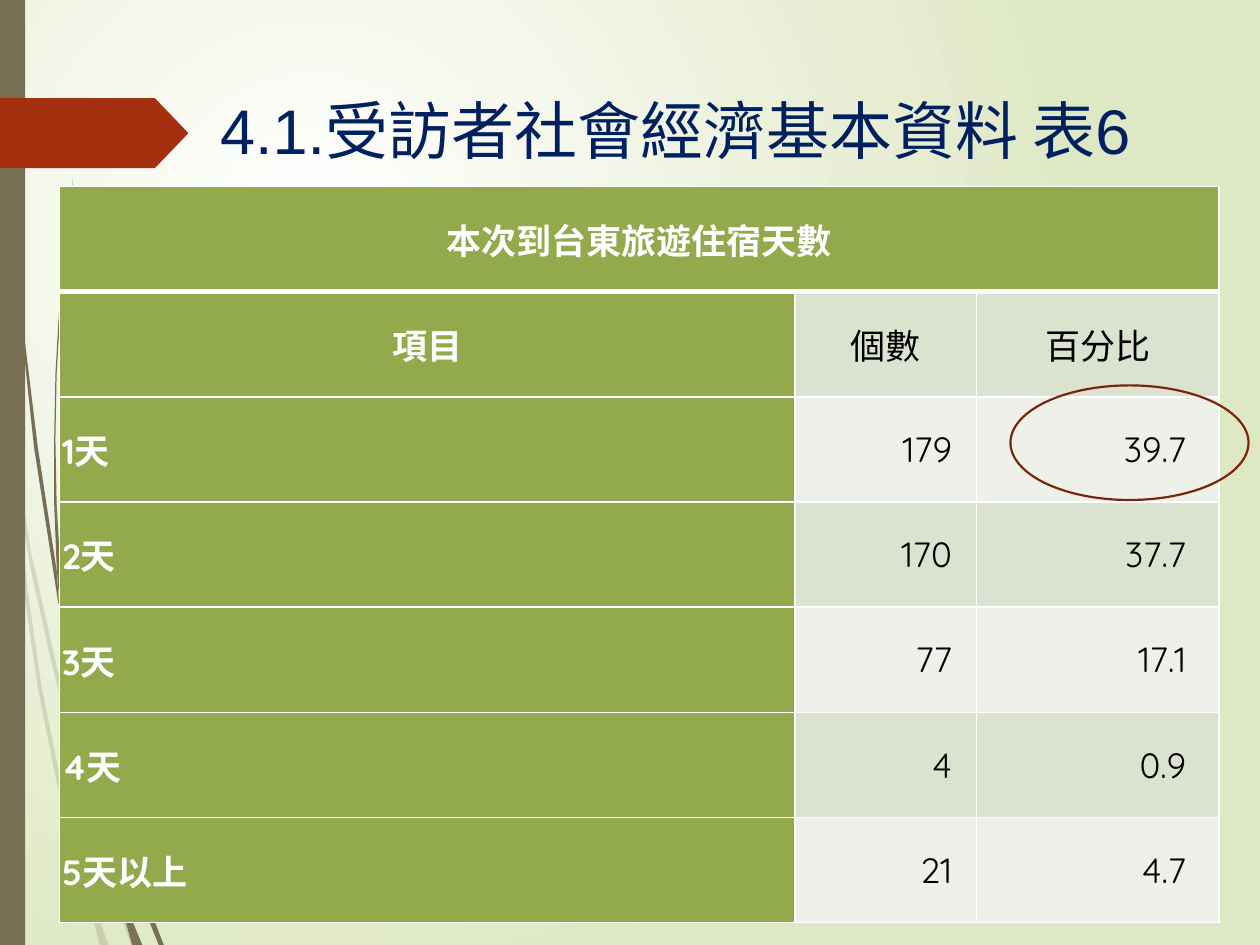
from dataclasses import dataclass

from lxml.etree import SubElement
from pptx import Presentation
from pptx.dml.color import RGBColor
from pptx.enum.shapes import MSO_SHAPE as Shape
from pptx.enum.text import MSO_ANCHOR as Anchor, PP_ALIGN as Align
from pptx.oxml.ns import qn
from pptx.util import Cm, Pt


@dataclass(frozen=True)
class Theme:
    title_font: str = "Arial"
    table_font: str = "Quicksand"
    title_size: int = 36
    table_size: int = 20
    title: str = "002060"
    stem: str = "766F54"
    tag: str = "A53010"
    ring: str = "7A240C"
    header: str = "92AA4C"
    bands: tuple = ("EEF1E9", "DCE2D0")
    light: str = "FFFFFF"
    dark: str = "000000"
    backdrop: str = "DFE8C4"


ROWS = [
    ("本次到台東旅遊住宿天數", "", ""),
    ("項目", "個數", "百分比"),
    ("1天", "179", "39.7"),
    ("2天", "170", "37.7"),
    ("3天", "77", "17.1"),
    ("4天", "4", "0.9"),
    ("5天以上", "21", "4.7"),
]
COLUMN_WIDTHS = (14.83, 3.66, 4.88)
NUMBER_MARGINS = (0.05, 0.5, 0.66)
ROW_HEIGHT = 2.12
GRID_UNIT = 0.0254

PALE_STEMS = [
    [(40, 522), (59, 599), (59, 586), (43, 520), (25, 440), (10, 345), (12, 376), (24, 450)],
    [(64, 607), (61, 596), (61, 610), (85, 694), (104, 750), (108, 750), (88, 692)],
    [(83, 750), (86, 750), (73, 711)],
    [(64, 683), (48, 619), (33, 545), (22, 469), (12, 376), (8, 350), (19, 470),
     (30, 546), (45, 621), (64, 693), (70, 714)],
    [(70, 714), (79, 750), (82, 750)],
    [(67, 692), (65, 683), (69, 707), (70, 714), (82, 750), (83, 750), (73, 711)],
]
DARK_STEMS = [
    [(5, 110), (14, 233), (27, 355), (46, 477), (47, 481), (45, 453), (30, 355),
     (15, 232), (6, 109), (4, 48), (3, 0), (2, 0), (3, 48)],
    [(94, 649), (91, 641), (91, 656), (109, 708), (126, 750), (130, 750), (113, 706)],
    [(50, 472), (48, 453), (45, 400), (44, 349), (45, 297), (48, 245), (52, 193),
     (58, 141), (51, 193), (47, 245), (44, 297), (43, 349), (43, 400), (45, 449), (49, 472)],
    [(110, 750), (113, 750), (100, 719)],
    [(47, 477), (53, 505), (50, 472), (45, 449)],
    [(97, 722), (105, 750), (108, 750)],
    [(96, 706), (91, 691), (97, 722), (108, 750), (110, 750), (100, 719)],
]


def set_all(target, values):
    for name, value in values.items():
        setattr(target, name, value)


class SlideBuilder:
    """Draws themed elements on the current slide."""

    def __init__(self, slide, theme):
        self.slide = slide
        self.theme = theme

    def background(self):
        fill = self.slide.background.fill
        fill.gradient()
        for stop, color in zip(fill.gradient_stops, (self.theme.light, self.theme.backdrop)):
            stop.color.rgb = RGBColor.from_string(color)
        gradient = self.slide.element.find(".//" + qn("a:gradFill"))
        gradient.remove(gradient.find(qn("a:lin")))
        circle = SubElement(gradient, qn("a:path"), {"path": "circle"})
        SubElement(circle, qn("a:fillToRect"), l="50000", t="50000", r="100000", b="100000")

    def paint(self, shape, fill=None, line=None, width=1.25):
        shape.shadow.inherit = False
        for part, color in ((shape.fill, fill), (shape.line.fill, line)):
            if color:
                part.solid()
                part.fore_color.rgb = RGBColor.from_string(color)
            else:
                part.background()
        if line:
            shape.line.width = Pt(width)
        return shape

    def shape(self, kind, left, top, width, height, **colors):
        shape = self.slide.shapes.add_shape(kind, Cm(left), Cm(top), Cm(width), Cm(height))
        return self.paint(shape, **colors)

    def stem(self, points, opacity=100):
        builder = self.slide.shapes.build_freeform(*points[0], scale=Cm(GRID_UNIT))
        builder.add_line_segments(points[1:], close=True)
        shape = self.paint(builder.convert_to_shape(), fill=self.theme.stem)
        if opacity < 100:
            color = shape.element.spPr.find(qn("a:solidFill"))[0]
            SubElement(color, qn("a:alpha"), val=str(opacity * 1000))

    def style_text(self, paragraph, text, color, align=Align.LEFT, **font):
        paragraph.text = text
        paragraph.alignment = align
        set_all(paragraph.font, font)
        paragraph.font.color.rgb = RGBColor.from_string(color)

    def title(self, text, left, top, width, height):
        box = self.slide.shapes.add_textbox(Cm(left), Cm(top), Cm(width), Cm(height))
        box.text_frame.word_wrap = True
        self.style_text(box.text_frame.paragraphs[0], text, self.theme.title,
                        name=self.theme.title_font, size=Pt(self.theme.title_size))

    def borders(self, cell, row):
        properties = cell._tc.get_or_add_tcPr()
        heavy = {"lnB": row == 0, "lnT": row == 1}
        for side in ("lnL", "lnR", "lnT", "lnB"):
            width = Pt(3 if heavy.get(side) else 1)
            line = SubElement(properties, qn("a:" + side), w=str(width))
            SubElement(SubElement(line, qn("a:solidFill")), qn("a:srgbClr"), val=self.theme.light)

    def cell(self, cell, row, column, text):
        theme = self.theme
        is_header = row == 0 or column == 0
        is_number = row > 1 and column > 0
        align = Align.CENTER if row < 2 else Align.RIGHT if is_number else Align.LEFT
        right = NUMBER_MARGINS[column] if is_number else 0.05
        set_all(cell, {
            "margin_left": Cm(0.05), "margin_right": Cm(right),
            "margin_top": 0, "margin_bottom": 0, "vertical_anchor": Anchor.MIDDLE,
        })
        self.borders(cell, row)
        cell.fill.solid()
        fill = theme.header if is_header else theme.bands[row % 2]
        cell.fill.fore_color.rgb = RGBColor.from_string(fill)
        self.style_text(cell.text_frame.paragraphs[0], text,
                        theme.light if is_header else theme.dark, align,
                        name=theme.table_font, size=Pt(theme.table_size), bold=is_header)

    def table(self, rows, left, top):
        frame = self.slide.shapes.add_table(
            len(rows), len(COLUMN_WIDTHS), Cm(left), Cm(top),
            Cm(sum(COLUMN_WIDTHS)), Cm(ROW_HEIGHT * len(rows)))
        table = frame.table
        for column, width in zip(table.columns, COLUMN_WIDTHS):
            column.width = Cm(width)
        for row_index, texts in enumerate(rows):
            table.rows[row_index].height = Cm(ROW_HEIGHT)
            for column_index, text in enumerate(texts):
                self.cell(table.cell(row_index, column_index), row_index, column_index, text)
        table.cell(0, 0).merge(table.cell(0, len(COLUMN_WIDTHS) - 1))


def main():
    presentation = Presentation()
    set_all(presentation, {"slide_width": Cm(25.4), "slide_height": Cm(19.05)})
    theme = Theme()
    builder = SlideBuilder(presentation.slides.add_slide(presentation.slide_layouts[6]), theme)
    builder.background()
    for stems, opacity in ((PALE_STEMS, 20), (DARK_STEMS, 100)):
        for points in stems:
            builder.stem(points, opacity)
    builder.shape(Shape.RECTANGLE, 0, 0, 0.51, 19.05, fill=theme.stem)
    tag = builder.shape(Shape.PENTAGON, 0, 1.98, 3.8, 1.41, fill=theme.tag)
    tag.adjustments[0] = 0.48
    builder.title("4.1.受訪者社會經濟基本資料 表6", 4.19, 1.73, 19.8, 3.56)
    builder.table(ROWS, 1.2, 3.76)
    builder.shape(Shape.OVAL, 20.37, 7.77, 4.8, 2.31, line=theme.ring)
    presentation.save("out.pptx")


if __name__ == "__main__":
    main()
